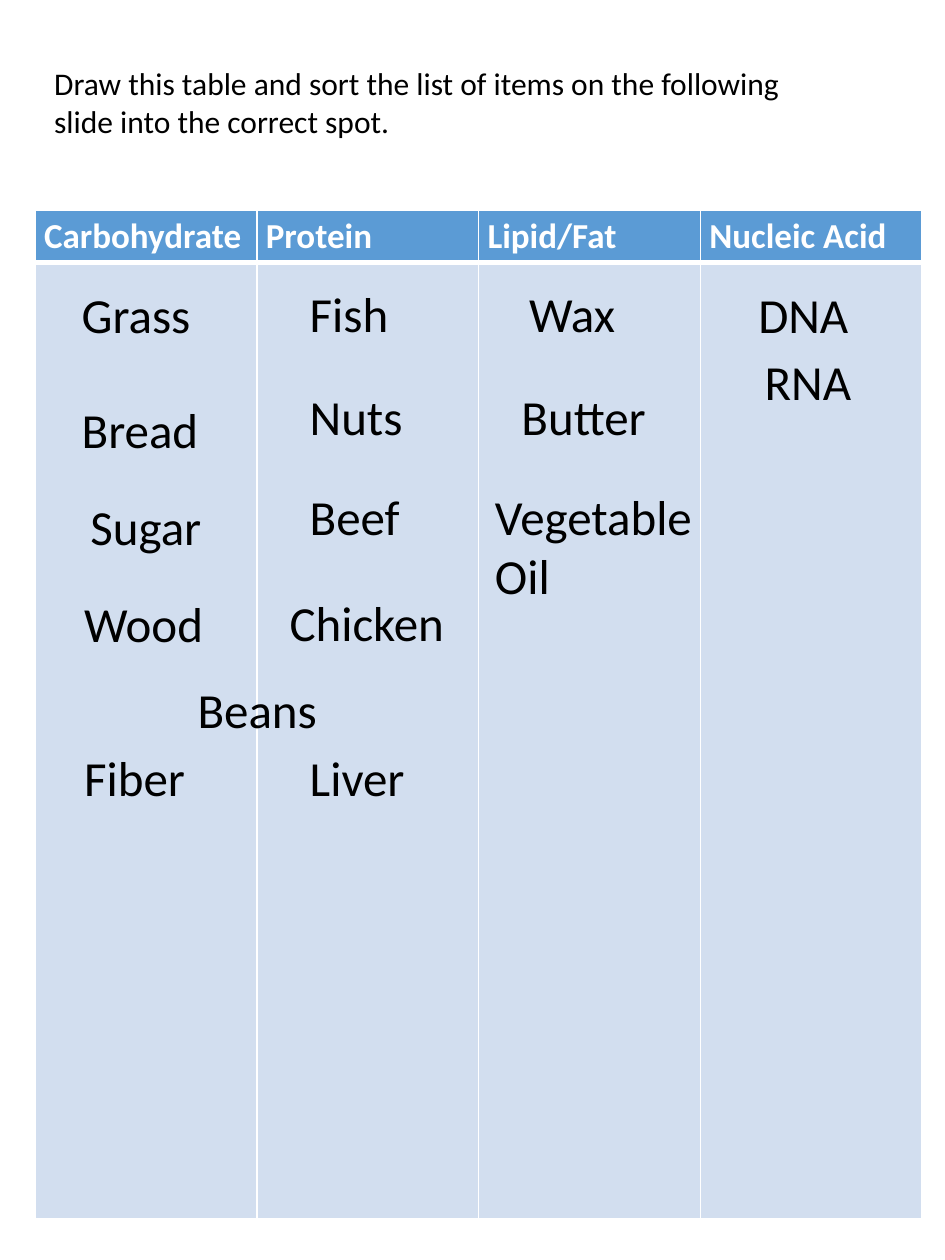
from dataclasses import dataclass

from lxml import etree
from pptx import Presentation
from pptx.dml.color import RGBColor
from pptx.enum.text import MSO_ANCHOR, MSO_AUTO_SIZE, PP_ALIGN
from pptx.oxml.ns import qn
from pptx.util import Inches, Pt

LEFT = PP_ALIGN.LEFT
TOP = MSO_ANCHOR.TOP
GROW = MSO_AUTO_SIZE.SHAPE_TO_FIT_TEXT
TITLE_ONLY = 5


@dataclass(frozen=True)
class Theme:
    font: str = "Calibri"
    ink: str = "000000"
    white: str = "FFFFFF"
    header_fill: str = "5B9BD5"
    body_fill: str = "D2DEEF"
    prompt_size: int = 18
    header_size: int = 20
    item_size: int = 28
    rule: int = 1
    header_rule: int = 3


class SlideBuilder:
    def __init__(self, page, theme):
        self.page = page
        self.theme = theme

    def add_text(self, frame, text, size, color, bold=False):
        para = frame.paragraphs[0]
        para.alignment = LEFT
        span = para.add_run()
        span.text = text
        span.font.name = self.theme.font
        span.font.size = Pt(size)
        span.font.bold = bold
        span.font.color.rgb = RGBColor.from_string(color)

    def fill_box(self, box, text, size):
        frame = box.text_frame
        frame.word_wrap = True
        frame.auto_size = GROW
        frame.vertical_anchor = TOP
        self.add_text(frame, text, size, self.theme.ink)

    def prompt(self, text, left, top, width, height):
        box = self.page.shapes.title
        box.left, box.top = Inches(left), Inches(top)
        box.width, box.height = Inches(width), Inches(height)
        self.fill_box(box, text, self.theme.prompt_size)

    def item(self, text, left, top, width, height=0.57):
        box = self.page.shapes.add_textbox(
            Inches(left), Inches(top), Inches(width), Inches(height))
        self.fill_box(box, text, self.theme.item_size)

    def borders(self, cell, top, bottom):
        """Draw white cell edges; top and bottom are widths in points."""
        properties = cell._tc.get_or_add_tcPr()
        rule = self.theme.rule
        for side, width in zip("LRTB", (rule, rule, top, bottom)):
            line = etree.SubElement(properties, qn(f"a:ln{side}"), w=str(Pt(width)))
            paint = etree.SubElement(line, qn("a:solidFill"))
            etree.SubElement(paint, qn("a:srgbClr"), val=self.theme.white)

    def sorting_table(self, headings, left, top, column_width, row_heights):
        theme = self.theme
        frame = self.page.shapes.add_table(
            len(row_heights), len(headings), Inches(left), Inches(top),
            Inches(column_width * len(headings)), Inches(sum(row_heights)))
        table = frame.table
        for column in table.columns:
            column.width = Inches(column_width)
        for row, height in zip(table.rows, row_heights):
            row.height = Inches(height)

        looks = (
            (theme.header_fill, theme.rule, theme.header_rule),
            (theme.body_fill, theme.header_rule, theme.rule),
        )
        for row, (fill, upper, lower) in zip(table.rows, looks):
            for cell in row.cells:
                cell.margin_left = cell.margin_right = Inches(0.07)
                cell.margin_top = cell.margin_bottom = Inches(0.04)
                self.borders(cell, upper, lower)
                cell.fill.solid()
                cell.fill.fore_color.rgb = RGBColor.from_string(fill)
        for cell, heading in zip(table.rows[0].cells, headings):
            self.add_text(cell.text_frame, heading, theme.header_size, theme.white, bold=True)


# Each item: text, left, top, width and, for two lines, height
ITEMS = (
    ("Grass", 0.55, 2.21, 1.19),
    ("Bread", 0.55, 3.12, 1.5),
    ("Sugar", 0.62, 3.89, 1.16),
    ("Wood", 0.57, 4.66, 1.68),
    ("Fiber", 0.57, 5.88, 1.68),
    ("Fish", 2.36, 2.2, 1.68),
    ("Nuts", 2.36, 3.02, 1.11),
    ("Beef", 2.36, 3.81, 1.68),
    ("Chicken", 2.2, 4.65, 1.5),
    ("Beans", 1.47, 5.34, 1.16),
    ("Liver", 2.36, 5.88, 1.68),
    ("Wax", 4.1, 2.2, 1.68),
    ("Butter", 4.04, 3.02, 1.68),
    ("Vegetable Oil", 3.83, 3.81, 1.95, 1.04),
    ("DNA", 5.92, 2.21, 1.13),
    ("RNA", 5.97, 2.74, 0.9),
)


def main():
    deck = Presentation()
    deck.slide_width, deck.slide_height = Inches(7.5), Inches(10)
    page = deck.slides.add_slide(deck.slide_layouts[TITLE_ONLY])
    builder = SlideBuilder(page, Theme())
    builder.prompt(
        "Draw this table and sort the list of items on the following slide "
        "into the correct spot.", 0.33, 0.46, 6.46, 0.71)
    builder.sorting_table(
        ("Carbohydrate", "Protein", "Lipid/Fat", "Nucleic Acid"),
        0.28, 1.67, 1.76, (0.41, 7.59))
    for item in ITEMS:
        builder.item(*item)
    deck.save("out.pptx")


if __name__ == "__main__":
    main()
